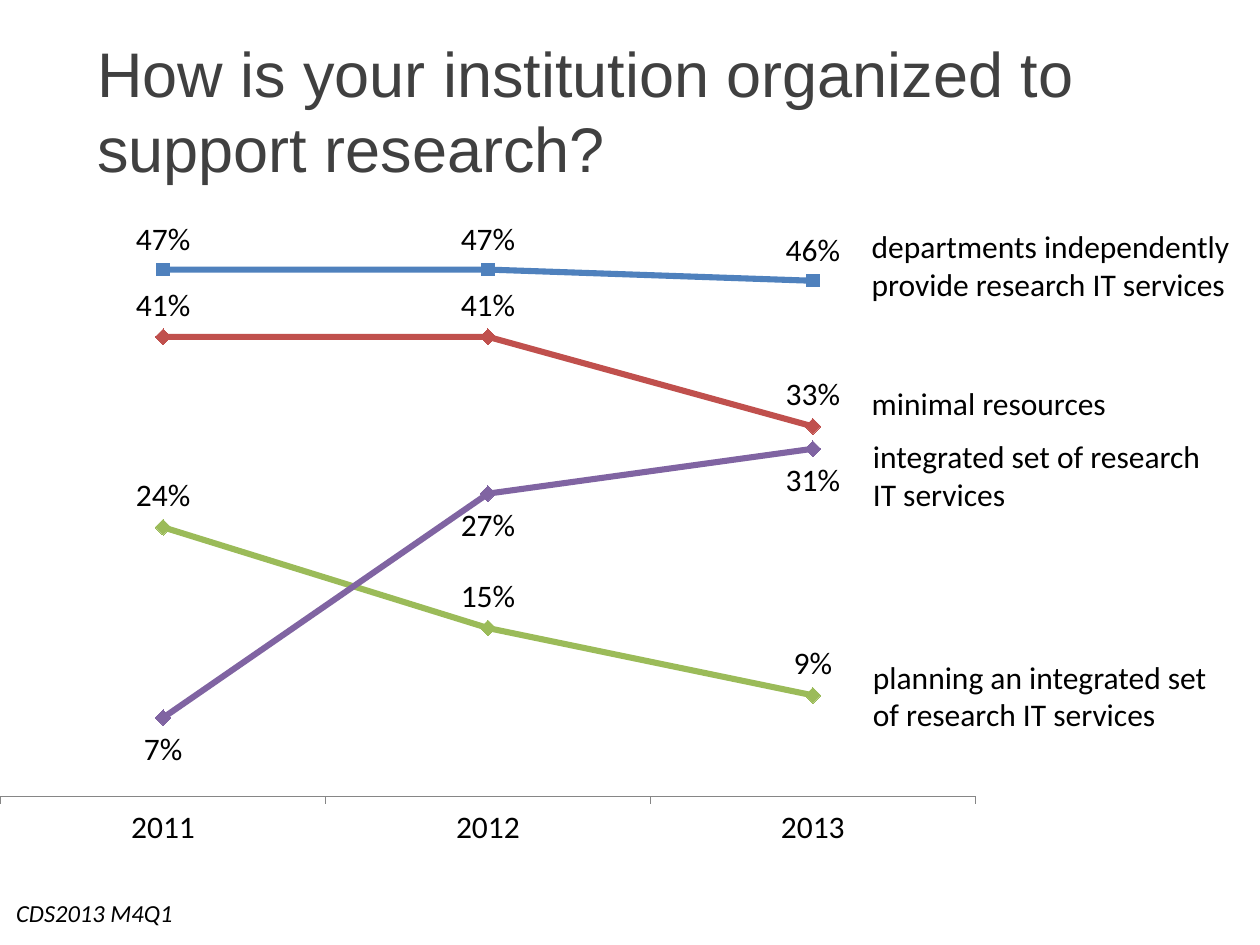
from dataclasses import dataclass

from lxml.etree import SubElement
from pptx import Presentation
from pptx.chart.data import CategoryChartData
from pptx.dml.color import RGBColor
from pptx.enum.chart import XL_CHART_TYPE, XL_LABEL_POSITION, XL_MARKER_STYLE, XL_TICK_MARK
from pptx.enum.text import MSO_ANCHOR, MSO_AUTO_SIZE, PP_ALIGN
from pptx.oxml.ns import qn
from pptx.util import Inches, Pt


@dataclass(frozen=True)
class Theme:
    title_font: str = "Arial"
    body_font: str = "Calibri"
    title_size: int = 36
    body_size: int = 18
    source_size: int = 14
    title_color: str = "404040"
    text_color: str = "000000"
    axis_color: str = "868686"
    line_width: float = 3.5


@dataclass(frozen=True)
class Trend:
    name: str
    values: tuple
    color: str
    marker: XL_MARKER_STYLE = XL_MARKER_STYLE.DIAMOND
    marker_size: int = 9
    label_position: XL_LABEL_POSITION = XL_LABEL_POSITION.ABOVE


class SlideBuilder:
    COLUMNS, ROWS = 100, 75

    def __init__(self, deck, theme):
        self.deck = deck
        self.theme = theme
        self.slide = deck.slides.add_slide(deck.slide_layouts[5])

    def place(self, column, row, columns, rows):
        across = self.deck.slide_width / self.COLUMNS
        down = self.deck.slide_height / self.ROWS
        return [round(length) for length in
                (column * across, row * down, columns * across, rows * down)]

    def style_font(self, font, name, size, color, italic=False):
        font.name = name
        font.size = Pt(size)
        font.italic = italic
        font.color.rgb = RGBColor.from_string(color)

    def title(self, text, *cells):
        box = self.slide.shapes.title
        box.left, box.top, box.width, box.height = self.place(*cells)
        frame = box.text_frame
        frame.auto_size = MSO_AUTO_SIZE.NONE
        frame.vertical_anchor = MSO_ANCHOR.TOP
        frame.margin_top = Inches(0.1)
        para = frame.paragraphs[0]
        para.alignment = PP_ALIGN.LEFT
        span = para.add_run()
        span.text = text
        self.style_font(span.font, self.theme.title_font,
                        self.theme.title_size, self.theme.title_color)

    def text(self, text, *cells, size=None, italic=False, wrap=True):
        box = self.slide.shapes.add_textbox(*self.place(*cells))
        frame = box.text_frame
        frame.word_wrap = wrap
        frame.auto_size = MSO_AUTO_SIZE.SHAPE_TO_FIT_TEXT
        span = frame.paragraphs[0].add_run()
        span.text = text
        self.style_font(span.font, self.theme.body_font,
                        size or self.theme.body_size, self.theme.text_color, italic)

    def line_chart(self, categories, trends, plot, *cells):
        data = CategoryChartData(number_format="0%")
        data.categories = categories
        for trend in trends:
            data.add_series(trend.name, trend.values)
        chart = self.slide.shapes.add_chart(
            XL_CHART_TYPE.LINE_MARKERS, *self.place(*cells), data).chart
        chart.has_legend = False
        chart.has_title = False
        self.style_font(chart.font, self.theme.body_font,
                        self.theme.body_size, self.theme.text_color)
        chart.plots[0].vary_by_categories = False
        self.chart_axes(chart)
        self.plot_layout(chart, plot)
        for series, trend in zip(chart.plots[0].series, trends):
            self.trend_line(series, trend)

    def chart_axes(self, chart):
        values = chart.value_axis
        values.minimum_scale, values.maximum_scale = 0, 0.5
        values.has_major_gridlines = False
        values.visible = False
        years = chart.category_axis
        years.major_tick_mark = XL_TICK_MARK.OUTSIDE
        years.format.line.color.rgb = RGBColor.from_string(self.theme.axis_color)
        years.format.line.width = Pt(0.75)

    def plot_layout(self, chart, plot):
        area = chart.plots[0]._element.getparent()
        for old in area.findall(qn("c:layout")):
            area.remove(old)
        layout = SubElement(area, qn("c:layout"))
        area.insert(0, layout)
        manual = SubElement(layout, qn("c:manualLayout"))
        settings = [("layoutTarget", "inner"), ("xMode", "edge"), ("yMode", "edge"),
                    *zip("xywh", plot)]
        for tag, value in settings:
            SubElement(manual, qn(f"c:{tag}")).set("val", str(value))

    def trend_line(self, series, trend):
        color = RGBColor.from_string(trend.color)
        series.smooth = False
        series.format.line.color.rgb = color
        series.format.line.width = Pt(self.theme.line_width)
        marker = series.marker
        marker.style = trend.marker
        marker.size = trend.marker_size
        marker.format.fill.solid()
        marker.format.fill.fore_color.rgb = color
        marker.format.line.color.rgb = color
        labels = series.data_labels
        labels.show_value = True
        labels.number_format = "0%"
        labels.number_format_is_linked = False
        labels.position = trend.label_position
        self.style_font(labels.font, self.theme.body_font,
                        self.theme.body_size, self.theme.text_color)


def main():
    deck = Presentation()
    deck.slide_width, deck.slide_height = Inches(10), Inches(7.5)
    theme = Theme()
    page = SlideBuilder(deck, theme)

    page.title("How is your institution organized to support research?", 6.7, 1.7, 87.7, 8)
    page.text("CDS2013 M4Q1", 0.3, 70.8, 36.7, 3.4, size=theme.source_size, italic=True)

    trends = [
        Trend("Series 1", (0.47, 0.47, 0.46), "4F81BD", XL_MARKER_STYLE.SQUARE, 7),
        Trend("Series 2", (0.41, 0.41, 0.33), "C0504D"),
        Trend("Series 3", (0.24, 0.15, 0.09), "9BBB59"),
        Trend("Series 4", (0.07, 0.27, 0.31), "8064A2",
              label_position=XL_LABEL_POSITION.BELOW),
    ]
    page.line_chart(("2011", "2012", "2013"), trends, (0, 0.02, 0.99, 0.85),
                    0, 17.5, 78.2, 52.5)

    page.text("departments independently provide research IT services", 68.2, 17.5, 32.5, 7.1)
    page.text("minimal resources", 68.2, 30, 20.9, 4, wrap=False)
    page.text("planning an integrated set of research IT services", 68.3, 51.7, 30, 7.1)
    page.text("integrated set of research IT services", 68.3, 34.2, 29, 7.1)
    deck.save("out.pptx")


if __name__ == "__main__":
    main()
